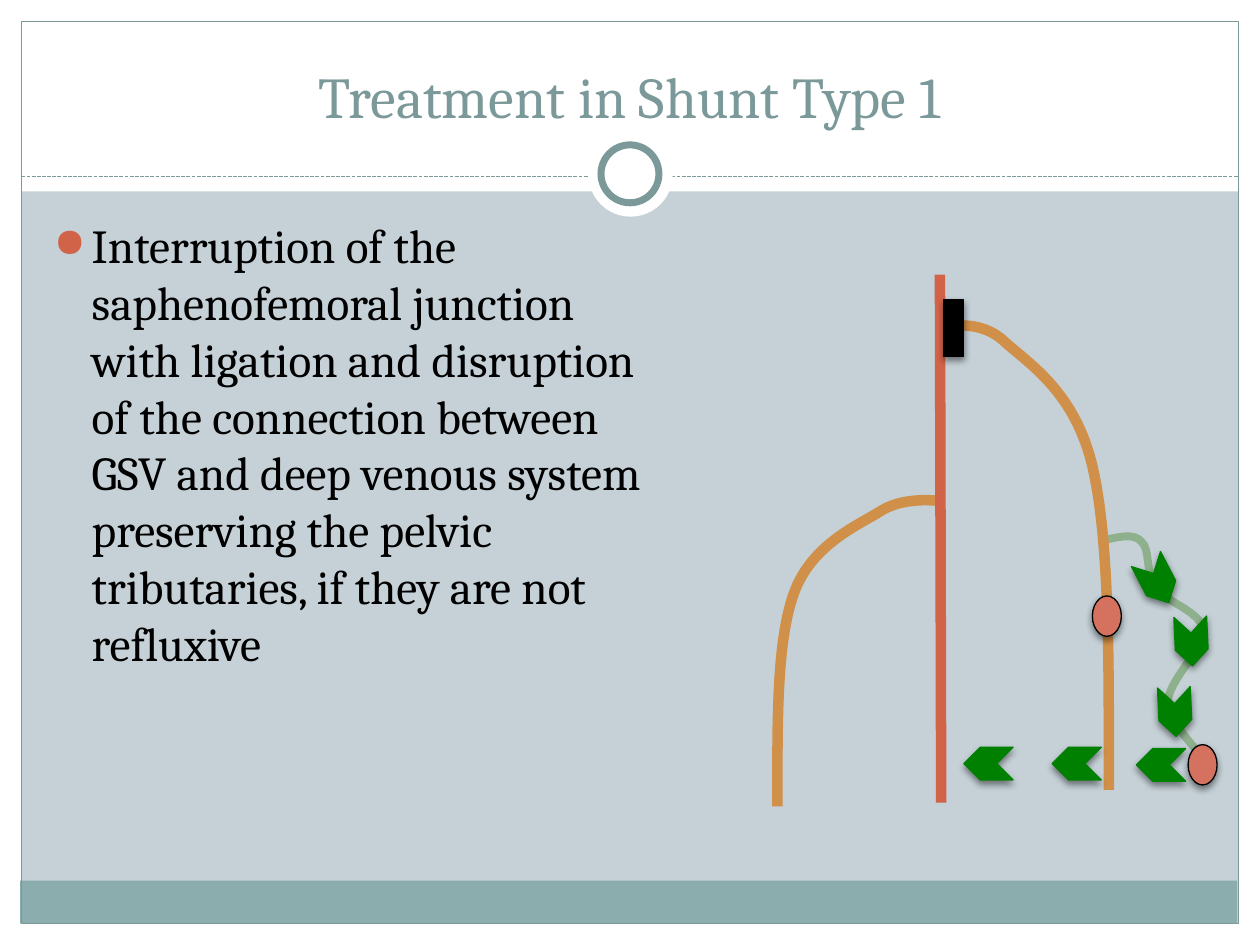
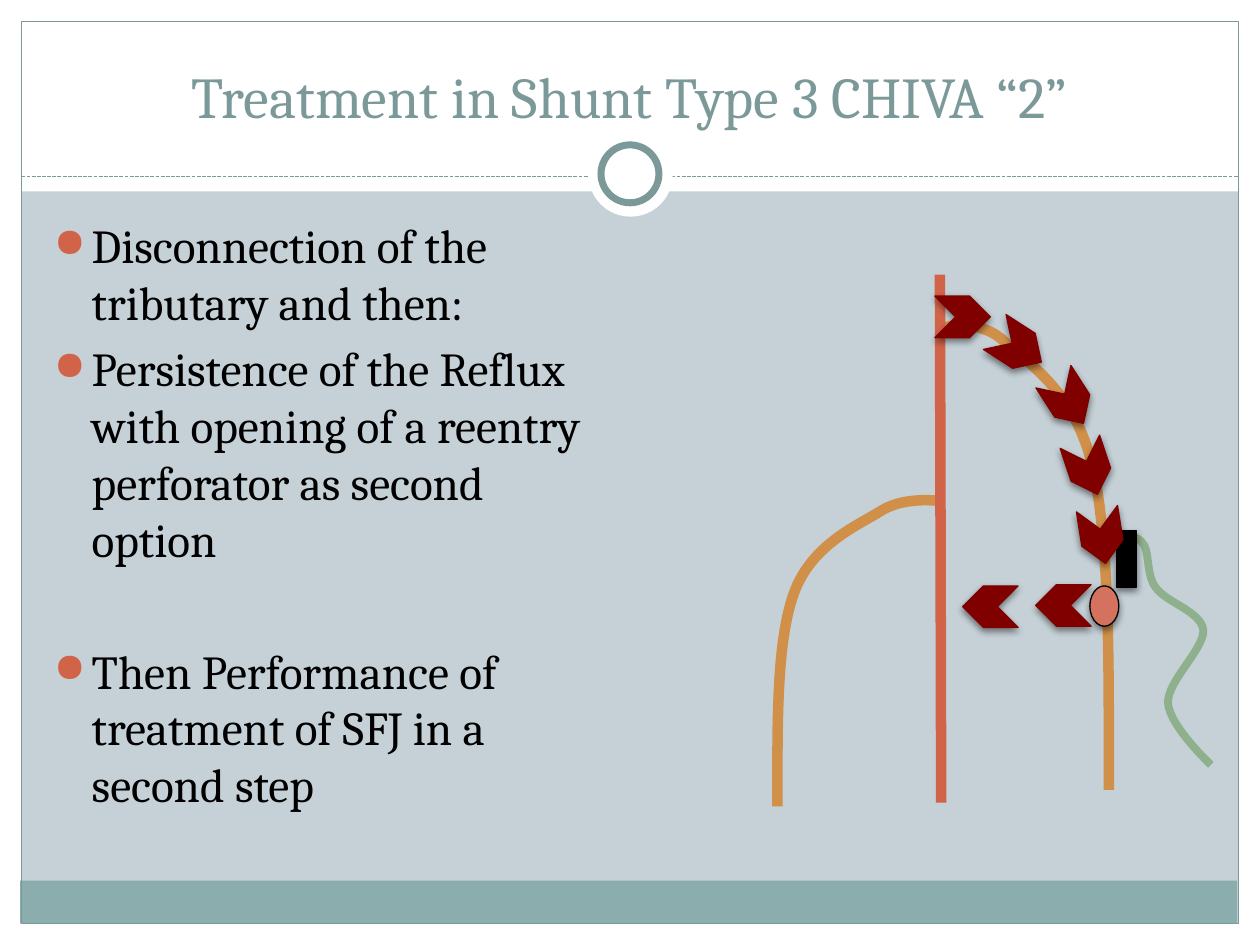
from lxml import etree
from pptx import Presentation
from pptx.dml.color import RGBColor
from pptx.enum.dml import MSO_LINE
from pptx.enum.shapes import MSO_CONNECTOR, MSO_SHAPE
from pptx.enum.text import MSO_ANCHOR, MSO_AUTO_SIZE, PP_ALIGN
from pptx.oxml.ns import qn
from pptx.util import Inches, Pt

RECT, OVAL, CHEVRON = MSO_SHAPE.RECTANGLE, MSO_SHAPE.OVAL, MSO_SHAPE.CHEVRON
STRAIGHT = MSO_CONNECTOR.STRAIGHT
DASHED = MSO_LINE.SQUARE_DOT
CENTER, BOTTOM = PP_ALIGN.CENTER, MSO_ANCHOR.BOTTOM
NO_AUTOFIT = MSO_AUTO_SIZE.NONE

WHITE = RGBColor(0xFF, 0xFF, 0xFF)
BLACK = RGBColor(0x00, 0x00, 0x00)
BACKDROP = RGBColor(0xC5, 0xD1, 0xD7)
FOOT_BAND = RGBColor(0x8C, 0xAD, 0xAE)
SLATE = RGBColor(0x7C, 0x99, 0x9A)
DEEP_VEIN = RGBColor(0xD1, 0x63, 0x49)
SAPHENOUS = RGBColor(0xD1, 0x90, 0x49)
TRIBUTARY = RGBColor(0x8F, 0xB0, 0x8C)
PERFORATOR = RGBColor(0xD4, 0x72, 0x5F)
GREEN = RGBColor(0x00, 0x80, 0x00)
MAROON = RGBColor(0x80, 0x00, 0x00)

FONT = "Cambria"
TITLE_SIZE, BODY_SIZE = 33, 27
PARAGRAPH_GAP = 5.4
SECOND_STEP_GAP = 43

# Vein courses: a start point, then (control, control, end) for each curve
SMALL_SAPHENOUS = (6.17, 6.4), [
    ((6.17, 5.75), (6.16, 5.1), (6.3, 4.71)),
    ((6.44, 4.32), (6.81, 4.17), (7, 4.05)),
    ((7.2, 3.93), (7.49, 3.98), (7.49, 3.98))]
TRIBUTARY_COURSE = (8.79, 4.28), [
    ((8.89, 4.26), (9, 4.23), (9.06, 4.3)),
    ((9.13, 4.36), (9.09, 4.55), (9.17, 4.66)),
    ((9.25, 4.78), (9.53, 4.85), (9.55, 5)),
    ((9.56, 5.15), (9.26, 5.41), (9.27, 5.58)),
    ((9.28, 5.76), (9.61, 6.07), (9.61, 6.07))]
GREAT_SAPHENOUS = (8.8, 6.27), [
    ((8.8, 5.29), (8.81, 4.3), (8.67, 3.7)),
    ((8.53, 3.11), (8.17, 2.89), (7.97, 2.71)),
    ((7.77, 2.52), (7.49, 2.6), (7.49, 2.6))]


def emu(point):
    return tuple(Inches(value) for value in point)


class Deck:
    def __init__(self):
        self.prs = Presentation()
        self.prs.slide_width, self.prs.slide_height = Inches(10), Inches(7.5)
        self.layout = self.prs.slide_layouts[5]
        self.slide = None

    def new_slide(self, title):
        first = self.slide is None
        self.slide = self.prs.slides.add_slide(self.layout)
        if first:
            self.build_layout()
        heading = self.slide.shapes.title
        heading.left, heading.top = emu((0.33, 0.25))
        heading.width, heading.height = emu((9.33, 0.83))
        frame = heading.text_frame
        frame.text = title
        frame.auto_size = NO_AUTOFIT
        frame.vertical_anchor = BOTTOM
        frame.paragraphs[0].alignment = CENTER
        self.style_text(frame.paragraphs[0], TITLE_SIZE, SLATE)

    def build_layout(self):
        """Draw the shared frame once and hand it to the layout."""
        fill = self.layout.background.fill
        fill.solid()
        fill.fore_color.rgb = BACKDROP
        for placeholder in list(self.layout.placeholders)[1:]:
            self.layout.shapes.element.remove(placeholder.element)
        for margin in ((0, 7.33, 10, 0.17), (0, 0, 10, 1.52),
                       (0, 0, 0.17, 7.5), (9.83, 0, 0.17, 7.5)):
            self.shape(RECT, margin, WHITE)
        self.shape(RECT, (0.16, 6.99, 9.66, 0.34), FOOT_BAND)
        self.shape(RECT, (0.17, 0.17, 9.66, 7.16), line=SLATE)
        self.line((0.17, 1.4), (9.83, 1.4), SLATE, 0.75, DASHED)
        self.shape(OVAL, (4.67, 1.05, 0.67, 0.67), WHITE)
        self.shape(OVAL, (4.77, 1.15, 0.46, 0.46), WHITE, SLATE, 4)
        for part in list(self.slide.shapes):
            if not part.is_placeholder:
                self.layout.shapes.element.append(part.element)

    def style_text(self, paragraph, size, color):
        font = paragraph.font
        font.name, font.size, font.color.rgb = FONT, Pt(size), color

    def shape(self, kind, box, fill=None, line=None, weight=0.75,
              rotation=0, shadow=False, group=None):
        shapes = (group or self.slide).shapes
        shape = shapes.add_shape(kind, *emu(box))
        shape.rotation = rotation
        shape.shadow.inherit = False
        if fill is None:
            shape.fill.background()
        else:
            shape.fill.solid()
            shape.fill.fore_color.rgb = fill
        if line is None:
            shape.line.fill.background()
        else:
            shape.line.color.rgb, shape.line.width = line, Pt(weight)
        if shadow:
            self.drop_shadow(shape)

    def drop_shadow(self, shape):
        effects = shape.element.spPr.find(qn("a:effectLst"))
        outer = etree.SubElement(
            effects, qn("a:outerShdw"), blurRad=str(Pt(4)), dist=str(Pt(2)),
            dir="5400000", rotWithShape="0")
        color = etree.SubElement(outer, qn("a:srgbClr"), val=str(BLACK))
        etree.SubElement(color, qn("a:alpha"), val="45000")

    def line(self, start, end, color, weight, dash=None):
        line = self.slide.shapes.add_connector(STRAIGHT, *emu(start), *emu(end))
        line.line.color.rgb, line.line.width = color, Pt(weight)
        if dash:
            line.line.dash_style = dash
        etree.SubElement(line.element.spPr, qn("a:effectLst"))

    def curve(self, course, color, weight):
        start, segments = course
        builder = self.slide.shapes.build_freeform(*emu(start))
        builder.add_line_segments([emu(end) for _, _, end in segments], close=False)
        vein = builder.convert_to_shape()
        vein.shadow.inherit = False
        vein.fill.background()
        vein.line.color.rgb, vein.line.width = color, Pt(weight)
        # Bend each straight segment into a cubic curve
        straights = list(vein.element.iter(qn("a:lnTo")))
        for straight, points in zip(straights, segments):
            bend = etree.Element(qn("a:cubicBezTo"))
            for x, y in map(emu, points):
                etree.SubElement(bend, qn("a:pt"),
                                 x=str(x - vein.left), y=str(y - vein.top))
            straight.getparent().replace(straight, bend)

    def bullets(self, width, items):
        """Write (text, space before) items as a bulleted list."""
        box = self.slide.shapes.add_textbox(*emu((0.33, 1.67, width, 5)))
        frame = box.text_frame
        frame.word_wrap = True
        for index, (text, gap) in enumerate(items):
            paragraph = frame.add_paragraph() if index else frame.paragraphs[0]
            paragraph.text = text
            paragraph.space_before = Pt(gap)
            props = paragraph._p.get_or_add_pPr()
            props.set("marL", str(Inches(0.3)))
            props.set("indent", str(Inches(-0.3)))
            color = etree.SubElement(props, qn("a:buClr"))
            etree.SubElement(color, qn("a:srgbClr"), val=str(DEEP_VEIN))
            etree.SubElement(props, qn("a:buSzPct"), val="85000")
            etree.SubElement(props, qn("a:buChar"), char="●")
            self.style_text(paragraph, BODY_SIZE, BLACK)

    def veins(self):
        self.curve(SMALL_SAPHENOUS, SAPHENOUS, 6)
        self.curve(TRIBUTARY_COURSE, TRIBUTARY, 4.5)
        self.curve(GREAT_SAPHENOUS, SAPHENOUS, 6)
        self.line((7.46, 2.18), (7.47, 6.37), DEEP_VEIN, 6)

    def perforator(self, left, top):
        self.shape(OVAL, (left, top, 0.23, 0.32), PERFORATOR, BLACK, shadow=True)

    def ligation(self, left, top):
        self.shape(RECT, (left, top, 0.16, 0.45), BLACK, BLACK, shadow=True)

    def flow(self, color, size, arrows):
        """Group chevrons given as (left, top, rotation)."""
        group = self.slide.shapes.add_group_shape()
        for left, top, rotation in arrows:
            self.shape(CHEVRON, (left, top, *size), color, color,
                       rotation=rotation, shadow=True, group=group)


def main():
    deck = Deck()

    # Shunt type 1
    deck.new_slide("Treatment in Shunt Type 1")
    deck.bullets(5.03, [(
        "Interruption of the saphenofemoral junction with ligation and "
        "disruption of the connection between GSV and deep venous system "
        "preserving the pelvic tributaries, if they are not refluxive",
        PARAGRAPH_GAP)])
    deck.veins()
    deck.perforator(8.67, 4.73)
    deck.perforator(9.43, 5.91)
    deck.flow(GREEN, (0.39, 0.26), [
        (8.99, 4.48, 62.5), (9.26, 4.96, 87.4), (9.13, 5.52, 87.4),
        (9.02, 5.94, 180), (8.35, 5.93, 180), (7.65, 5.93, 180)])
    deck.ligation(7.49, 2.38)

    # Shunt type 3
    deck.new_slide("Treatment in Shunt Type 3 CHIVA “2”")
    deck.bullets(4.67, [
        ("Disconnection of the tributary and then:", PARAGRAPH_GAP),
        ("Persistence of the Reflux with opening of a reentry perforator "
         "as second option", PARAGRAPH_GAP),
        ("Then Performance of treatment of SFJ in a second step",
         SECOND_STEP_GAP)])
    deck.veins()
    deck.ligation(8.86, 4.21)
    deck.perforator(8.65, 4.65)
    deck.flow(MAROON, (0.44, 0.33), [
        (7.42, 2.35, 0), (7.86, 2.59, 32.9), (8.26, 3.01, 57.2),
        (8.42, 3.55, 71.5), (8.52, 4.09, 81.1),
        (8.22, 4.64, 180), (7.64, 4.65, 180)])

    deck.prs.save("out.pptx")


if __name__ == "__main__":
    main()
